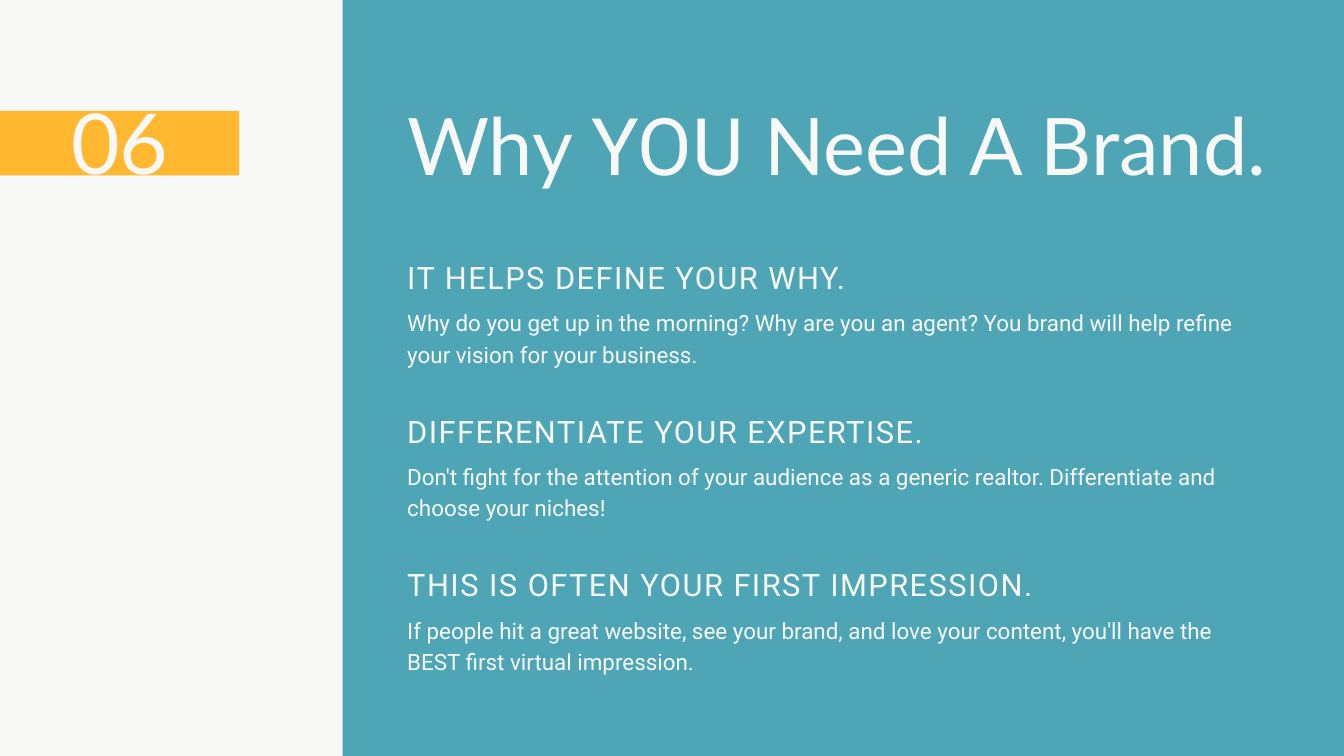
from pptx import Presentation
from pptx.dml.color import RGBColor
from pptx.enum.shapes import MSO_SHAPE
from pptx.enum.text import MSO_ANCHOR, MSO_AUTO_SIZE, PP_ALIGN
from pptx.util import Inches, Pt

COLORS = {"paper": "F8F8F6", "accent": "FFB82F", "panel": "4DA5B5"}

NUMBER = [("06", "Lato")]
TITLE = [("Why ", "Lato"), ("YOU", "Roboto"), (" Need A Brand.", "Lato")]
REASONS = [
    ("IT HELPS DEFINE YOUR WHY.",
     "Why do you get up in the morning? Why are you an agent? "
     "You brand will help refine your vision for your business."),
    ("DIFFERENTIATE YOUR EXPERTISE.",
     "Don't fight for the attention of your audience as a generic realtor. "
     "Differentiate and choose your niches!"),
    ("THIS IS OFTEN YOUR FIRST IMPRESSION.",
     "If people hit a great website, see your brand, and love your content, "
     "you'll have the BEST first virtual impression."),
]

# Sizes, line heights and letter spacing in points
STYLES = {
    "number": {"size": 90, "line": 108, "align": PP_ALIGN.CENTER},
    "title": {"size": 85, "line": 102},
    "heading": {"size": 33, "line": 46.2, "spacing": 1.6},
    "body": {"size": 24, "line": 33.6},
}

TEXT_LEFT, TEXT_WIDTH = 6.06, 12.71
FIRST_REASON_TOP, REASON_STEP = 3.76, 2.285
BODY_OFFSET = 0.78


def color(name):
    return RGBColor.from_string(COLORS[name])


def add_block(page, fill, *bounds):
    block = page.shapes.add_shape(MSO_SHAPE.RECTANGLE, *map(Inches, bounds))
    block.shadow.inherit = False
    block.fill.solid()
    block.fill.fore_color.rgb = color(fill)
    block.line.fill.background()


def write(box, spans, style):
    """Fill a box with one paragraph made of (text, font) spans."""
    frame = box.text_frame
    frame_format = {
        "margin_left": 0, "margin_top": 0, "margin_right": 0, "margin_bottom": 0,
        "word_wrap": True, "vertical_anchor": MSO_ANCHOR.TOP,
        "auto_size": MSO_AUTO_SIZE.SHAPE_TO_FIT_TEXT,
    }
    for name, value in frame_format.items():
        setattr(frame, name, value)
    para = frame.paragraphs[0]
    para.alignment = style.get("align", PP_ALIGN.LEFT)
    para.line_spacing = Pt(style["line"])
    for text, font in spans:
        span = para.add_run()
        span.text = text
        span.font.name = font
        span.font.size = Pt(style["size"])
        span.font.color.rgb = color("paper")
        if "spacing" in style:
            span.font._element.set("spc", str(round(style["spacing"] * 100)))


def add_text(shapes, spans, style, *bounds):
    write(shapes.add_textbox(*map(Inches, bounds)), spans, STYLES[style])


def add_title(page):
    title = page.shapes.title
    bounds = {"left": TEXT_LEFT, "top": 1.43, "width": 14.25, "height": 1.42}
    for name, value in bounds.items():
        setattr(title, name, Inches(value))
    write(title, TITLE, STYLES["title"])
    page.shapes._spTree.append(title._element)  # in front of the panel


def add_reason(page, heading, body, top):
    group = page.shapes.add_group_shape()
    add_text(group.shapes, [(body, "Roboto")], "body",
             TEXT_LEFT, top + BODY_OFFSET, TEXT_WIDTH, 0.9)
    add_text(group.shapes, [(heading, "Roboto")], "heading",
             TEXT_LEFT, top, TEXT_WIDTH, 0.6)


def main():
    deck = Presentation()
    deck.slide_width, deck.slide_height = Inches(20), Inches(11.25)
    page = deck.slides.add_slide(deck.slide_layouts[5])
    page.background.fill.solid()
    page.background.fill.fore_color.rgb = color("paper")

    add_block(page, "accent", 0, 1.65, 3.56, 0.96)
    add_text(page.shapes, NUMBER, "number", 1.01, 1.34, 1.55, 1.5)
    add_block(page, "panel", 5.1, 0, 14.9, 11.25)
    add_title(page)
    for index, (heading, body) in enumerate(REASONS):
        add_reason(page, heading, body, FIRST_REASON_TOP + index * REASON_STEP)

    deck.save("out.pptx")


if __name__ == "__main__":
    main()
